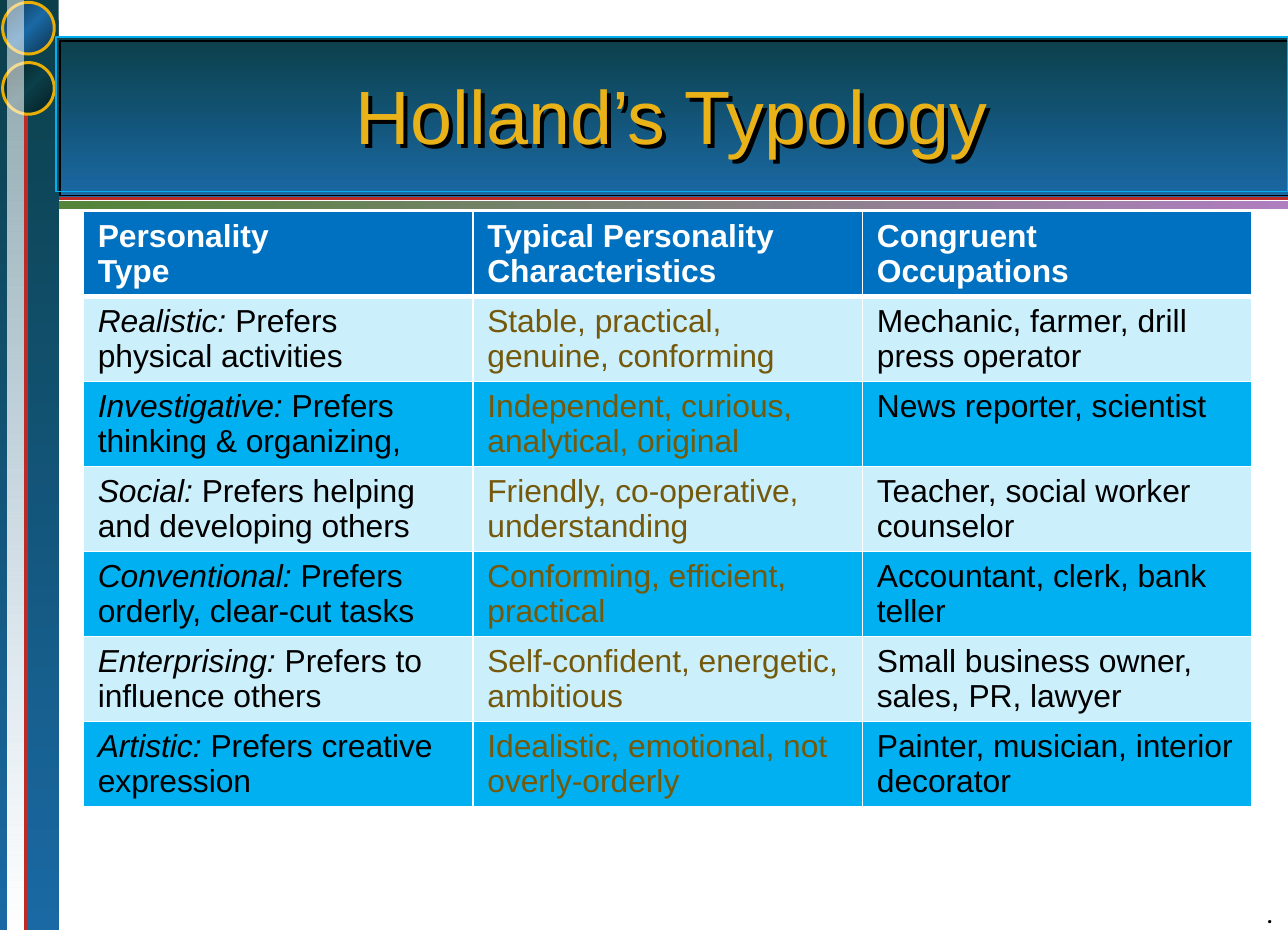
import pptx
import pptx.util
import pptx.dml.color
import pptx.enum.shapes
import pptx.enum.text
import pptx.oxml
import pptx.oxml.ns
from dataclasses import dataclass
from lxml import etree

Pt = pptx.util.Pt
qn = pptx.oxml.ns.qn
SHAPES = pptx.enum.shapes.MSO_SHAPE


@dataclass(frozen=True)
class Theme:
    font: str = "Arial"
    mark_font: str = "Vollkorn"
    title_size: int = 38
    table_size: int = 16
    mark_size: int = 9
    gold: str = "E8B218"
    ring: str = "E8AD06"
    red: str = "BB2C29"
    sky: str = "00B0F0"
    header: str = "0070C0"
    brown: str = "74590C"
    black: str = "000000"
    white: str = "FFFFFF"
    teal_blue: tuple = ("0B3F49", "1A69A4")
    green_violet: tuple = ("538438", "AF7EBE")
    blue_disc: tuple = ("0C314C", "1A69A4", "0C314C")
    teal_disc: tuple = ("051D22", "0B3F49", "051D22")


THEME = Theme()
WIDTH, HEIGHT = 648, 468
SIDE_WIDTH = 29.5

HEADINGS = ["Personality\nType", "Typical Personality Characteristics",
            "Congruent Occupations"]
TYPES = [
    ("Realistic:", "Prefers physical activities",
     "Stable, practical, genuine, conforming",
     "Mechanic, farmer, drill press operator"),
    ("Investigative:", "Prefers thinking & organizing,",
     "Independent, curious, analytical, original",
     "News reporter, scientist"),
    ("Social:", "Prefers helping and developing others",
     "Friendly, co-operative, understanding",
     "Teacher, social worker counselor"),
    ("Conventional:", "Prefers orderly, clear-cut tasks",
     "Conforming, efficient, practical",
     "Accountant, clerk, bank teller"),
    ("Enterprising:", "Prefers to influence others",
     "Self-confident, energetic, ambitious",
     "Small business owner, sales, PR, lawyer"),
    ("Artistic:", "Prefers creative expression",
     "Idealistic, emotional, not overly-orderly",
     "Painter, musician, interior decorator"),
]


def rgb(color):
    return pptx.dml.color.RGBColor.from_string(color)


def apply(target, values):
    for name, value in values.items():
        setattr(target, name, value)


def place(shape, left, top, width, height):
    apply(shape, {"left": Pt(left), "top": Pt(top),
                  "width": Pt(width), "height": Pt(height)})


def add_span(para, text, color, size=THEME.table_size, font=THEME.font, **style):
    span = para.add_run()
    span.text = text
    apply(span.font, {"name": font, "size": Pt(size), **style})
    span.font.color.rgb = rgb(color)


def add_color(parent, color, alpha=100):
    node = etree.SubElement(parent, qn("a:srgbClr"), val=color)
    if alpha < 100:
        etree.SubElement(node, qn("a:alpha"), val=str(alpha * 1000))


def add_gradient_shape(slide, kind, box, colors, angle, ring=None, first_alpha=100):
    shape = slide.shapes.add_shape(kind, *map(Pt, box))
    shape.shadow.inherit = False
    shape.fill.gradient()
    shape.fill.gradient_angle = -angle % 360
    # Replace the preset stops with evenly spaced ones
    stops = shape._element.spPr.find(".//" + qn("a:gsLst"))
    for stop in list(stops):
        stops.remove(stop)
    for index, color in enumerate(colors):
        position = index * 100000 // (len(colors) - 1)
        stop = etree.SubElement(stops, qn("a:gs"), pos=str(position))
        add_color(stop, color, 100 if index else first_alpha)
    if ring:
        shape.line.color.rgb = rgb(ring)
        shape.line.width = Pt(1.5)
    else:
        shape.line.fill.background()


def add_rule(slide, start, end, width):
    rule = slide.shapes.add_connector(
        pptx.enum.shapes.MSO_CONNECTOR.STRAIGHT, *map(Pt, start + end))
    rule.line.color.rgb = rgb(THEME.red)
    rule.line.width = Pt(width)
    etree.SubElement(rule._element.spPr, qn("a:effectLst"))


def add_title(slide, text):
    title = slide.shapes.title
    slide.shapes._spTree.append(title._element)  # in front of the banner
    place(title, 28.1, 18.7, 619.9, 77.8)
    title.fill.background()
    title.line.color.rgb = rgb(THEME.sky)
    title.line.width = Pt(0.75)
    effects = etree.SubElement(title._element.spPr, qn("a:effectLst"))
    shadow = etree.SubElement(effects, qn("a:outerShdw"), dist=str(Pt(2.8)),
                              dir="2700000", algn="ctr", rotWithShape="0")
    add_color(shadow, THEME.black)
    apply(title.text_frame, {
        "vertical_anchor": pptx.enum.text.MSO_ANCHOR.MIDDLE, "word_wrap": True})
    para = title.text_frame.paragraphs[0]
    para.alignment = pptx.enum.text.PP_ALIGN.CENTER
    add_span(para, text, THEME.gold, THEME.title_size)


def set_borders(cell, bottom):
    properties = cell._tc.get_or_add_tcPr()
    for index, (side, width) in enumerate(
            {"lnL": 1, "lnR": 1, "lnT": 1, "lnB": bottom}.items()):
        line = etree.Element(qn("a:" + side), w=str(Pt(width)))
        add_color(etree.SubElement(line, qn("a:solidFill")), THEME.white)
        properties.insert(index, line)


def fill_cell(cell, color, alpha=100, bottom=1):
    cell.fill.solid()
    cell.fill.fore_color.rgb = rgb(color)
    if alpha < 100:
        node = cell._tc.tcPr.find(".//" + qn("a:srgbClr"))
        etree.SubElement(node, qn("a:alpha"), val=str(alpha * 1000))
    set_borders(cell, bottom)


def add_type_table(slide):
    table = slide.shapes.add_table(len(TYPES) + 1, len(HEADINGS), Pt(42), Pt(106.5),
                                   Pt(588), Pt(299.6)).table
    table.horz_banding = False
    # Header row
    for cell, heading in zip(table.rows[0].cells, HEADINGS):
        fill_cell(cell, THEME.header, bottom=3)
        for index, text in enumerate(heading.split("\n")):
            frame = cell.text_frame
            para = frame.add_paragraph() if index else frame.paragraphs[0]
            add_span(para, text, THEME.white, bold=True)
    # One row per personality type, pale and full colour in turn
    for number, (name, preference, traits, jobs) in enumerate(TYPES):
        cells = list(table.rows[number + 1].cells)
        for cell in cells:
            fill_cell(cell, THEME.sky, 100 if number % 2 else 20)
        kind, character, work = [cell.text_frame.paragraphs[0] for cell in cells]
        add_span(kind, name, THEME.black, bold=False, italic=True)
        add_span(kind, " " + preference, THEME.black, bold=False, italic=False)
        add_span(character, traits, THEME.brown, bold=False)
        add_span(work, jobs, THEME.black, bold=False)


def add_corner_mark(slide):
    box = slide.shapes.add_textbox(Pt(638), Pt(455.8), Pt(2.2), Pt(10.8))
    apply(box.text_frame, {
        "margin_left": 0, "margin_right": 0, "margin_top": 0, "margin_bottom": 0,
        "word_wrap": False, "vertical_anchor": pptx.enum.text.MSO_ANCHOR.BOTTOM})
    para = box.text_frame.paragraphs[0]
    para.alignment = pptx.enum.text.PP_ALIGN.RIGHT
    add_span(para, ".", THEME.black, THEME.mark_size, THEME.mark_font,
             bold=True, italic=True)


def main():
    deck = pptx.Presentation()
    apply(deck, {"slide_width": Pt(WIDTH), "slide_height": Pt(HEIGHT)})
    slide = deck.slides.add_slide(deck.slide_layouts[5])
    # Banner and its rules
    add_gradient_shape(slide, SHAPES.RECTANGLE, (28.1, 101.2, 619.9, 3.8),
                       THEME.green_violet, 0)
    add_gradient_shape(slide, SHAPES.RECTANGLE, (0, 18, WIDTH, 81.4),
                       THEME.teal_blue, 90)
    add_rule(slide, (28.1, 100), (WIDTH, 100), 1.5)
    # Side bar with discs and a light stripe
    add_gradient_shape(slide, SHAPES.RECTANGLE, (0, 0, SIDE_WIDTH, HEIGHT),
                       THEME.teal_blue, 90)
    add_rule(slide, (13, 57), (13, HEIGHT), 2.25)
    for top, colors in ((31.5, THEME.teal_disc), (1.2, THEME.blue_disc)):
        add_gradient_shape(slide, SHAPES.OVAL, (1.3, top, 26, 26), colors, 45,
                           ring=THEME.ring)
    add_gradient_shape(slide, SHAPES.RECTANGLE, (3.6, 0, 8.3, HEIGHT),
                       (THEME.white, THEME.white), 90, first_alpha=52)
    # Content
    add_corner_mark(slide)
    add_title(slide, "Holland’s Typology")
    add_type_table(slide)
    deck.save("out.pptx")


if __name__ == "__main__":
    main()
